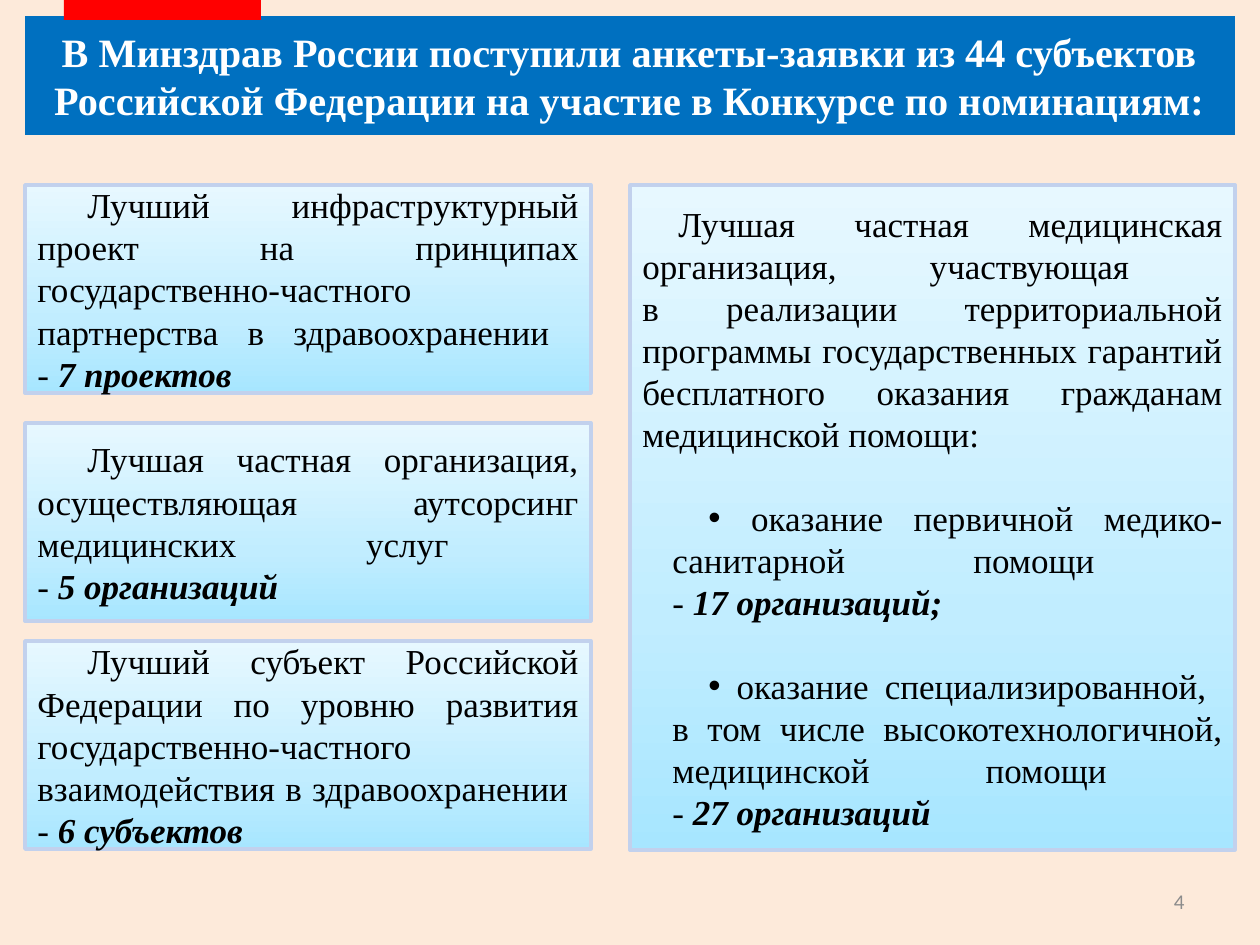
import copy

import pptx
import pptx.dml.color
import pptx.enum.shapes
import pptx.enum.text
import pptx.oxml.ns
import pptx.util
from lxml import etree

ALIGN = pptx.enum.text.PP_ALIGN
MIDDLE = pptx.enum.text.MSO_ANCHOR.MIDDLE
RECT = pptx.enum.shapes.MSO_SHAPE.RECTANGLE
SERIF = "Times New Roman"
COLORS = {
    "background": "FDEADA", "banner": "0070C0", "accent": "FF0000",
    "border": "C2D1ED", "text": "000000", "white": "FFFFFF", "number": "8C8C8C",
}
PANEL_STOPS = [(0, "A7E6FF"), (0.35, "C1EDFF"), (1, "E7F8FF")]

TITLE = ("В Минздрав России поступили анкеты-заявки из 44 субъектов "
         "Российской Федерации на участие в Конкурсе по номинациям:")
# Left column: top, height, nomination, result
NOMINATIONS = [
    (185, 208, "Лучший инфраструктурный проект на принципах "
     "государственно-частного партнерства в здравоохранении \n- ", "7 проектов"),
    (423, 198, "Лучшая частная организация, осуществляющая аутсорсинг "
     "медицинских услуг \n- ", "5 организаций"),
    (641, 208, "Лучший субъект Российской Федерации по уровню развития "
     "государственно-частного взаимодействия в здравоохранении \n- ", "6 субъектов"),
]
CLINIC_INTRO = ("Лучшая частная медицинская организация, участвующая \n"
                "в реализации территориальной программы государственных "
                "гарантий бесплатного оказания гражданам медицинской помощи:")
CLINIC_ITEMS = [
    (" оказание первичной медико-санитарной помощи \n- ", "17 организаций;"),
    (" оказание специализированной, \nв том числе высокотехнологичной, "
     "медицинской помощи \n- ", "27 организаций"),
]


def px(n):
    return pptx.util.Emu(round(n * 914400 / 126))


def rgb(value):
    return pptx.dml.color.RGBColor.from_string(value)


def place(shape, box):
    shape.left, shape.top, shape.width, shape.height = map(px, box)


def set_font(r, size, color, name=SERIF, bold=False, italic=False):
    r.font.size, r.font.name = pptx.util.Pt(size), name
    r.font.bold, r.font.italic = bold, italic
    r.font.color.rgb = rgb(color)


def add_rect(s, box):
    sp = s.shapes.add_shape(RECT, *map(px, box))
    sp.shadow.inherit = False
    return sp


def fill_gradient(fill):
    fill.gradient()
    fill.gradient_angle = 90
    first = fill.gradient_stops[0]._gs
    first.addnext(copy.deepcopy(first))
    for stop, (position, color) in zip(fill.gradient_stops, PANEL_STOPS):
        stop.position = position
        stop.color.rgb = rgb(color)


def write_entry(p, text, result="", indent=50, margin=0, bullet=False):
    """Justified paragraph with a first-line indent and a bold italic result."""
    p.text = text
    p.alignment = ALIGN.JUSTIFY
    for r in p.runs:
        set_font(r, 20, COLORS["text"])
    if result:
        r = p.add_run()
        r.text = result
        set_font(r, 20, COLORS["text"], bold=True, italic=True)
    pPr = p._p.get_or_add_pPr()
    pPr.set("marL", str(px(margin)))
    pPr.set("indent", str(px(indent)))
    if bullet:
        p.space_before = pptx.util.Pt(24)
        font = etree.SubElement(pPr, pptx.oxml.ns.qn("a:buFont"))
        font.set("typeface", "Arial")
        etree.SubElement(pPr, pptx.oxml.ns.qn("a:buChar")).set("char", "•")


def add_panel(s, box):
    sp = add_rect(s, box)
    fill_gradient(sp.fill)
    sp.line.color.rgb = rgb(COLORS["border"])
    sp.line.width = pptx.util.Pt(2)
    tf = sp.text_frame
    tf.word_wrap = True
    tf.vertical_anchor = MIDDLE
    return tf


def add_header(s, box):
    left, top, width, height = box
    # Banner with the title
    sp = s.shapes.title
    place(sp, box)
    sp.fill.solid()
    sp.fill.fore_color.rgb = rgb(COLORS["banner"])
    tf = sp.text_frame
    tf.text = TITLE
    tf.word_wrap = True
    tf.auto_size = pptx.enum.text.MSO_AUTO_SIZE.NONE
    tf.vertical_anchor = MIDDLE
    p = tf.paragraphs[0]
    p.alignment = ALIGN.CENTER
    set_font(p.runs[0], 23, COLORS["white"], bold=True)
    # Red tab at the slide edge
    tab = add_rect(s, (left + 39, top - 16, 197, 20))
    tab.fill.solid()
    tab.fill.fore_color.rgb = rgb(COLORS["accent"])
    tab.line.fill.background()


def add_nominations(s, left, width):
    for top, height, text, result in NOMINATIONS:
        tf = add_panel(s, (left, top, width, height))
        write_entry(tf.paragraphs[0], text, result)


def add_clinics(s, box):
    tf = add_panel(s, box)
    write_entry(tf.paragraphs[0], CLINIC_INTRO, indent=36)
    for text, result in CLINIC_ITEMS:
        write_entry(tf.add_paragraph(), text, result, 36, 30, bullet=True)


def add_slide_number(s, box):
    tf = s.shapes.add_textbox(*map(px, box)).text_frame
    tf.text = "4"
    tf.word_wrap = True
    tf.vertical_anchor = MIDDLE
    p = tf.paragraphs[0]
    p.alignment = ALIGN.RIGHT
    set_font(p.runs[0], 12, COLORS["number"], "Calibri")


def main():
    prs = pptx.Presentation()
    prs.slide_width, prs.slide_height = px(1260), px(945)
    s = prs.slides.add_slide(prs.slide_layouts[5])
    s.background.fill.solid()
    s.background.fill.fore_color.rgb = rgb(COLORS["background"])
    add_header(s, (25, 16, 1210, 119))
    add_nominations(s, 25, 566)
    add_clinics(s, (630, 185, 605, 665))
    add_slide_number(s, (903, 876, 294, 50))
    prs.save("out.pptx")


if __name__ == "__main__":
    main()
